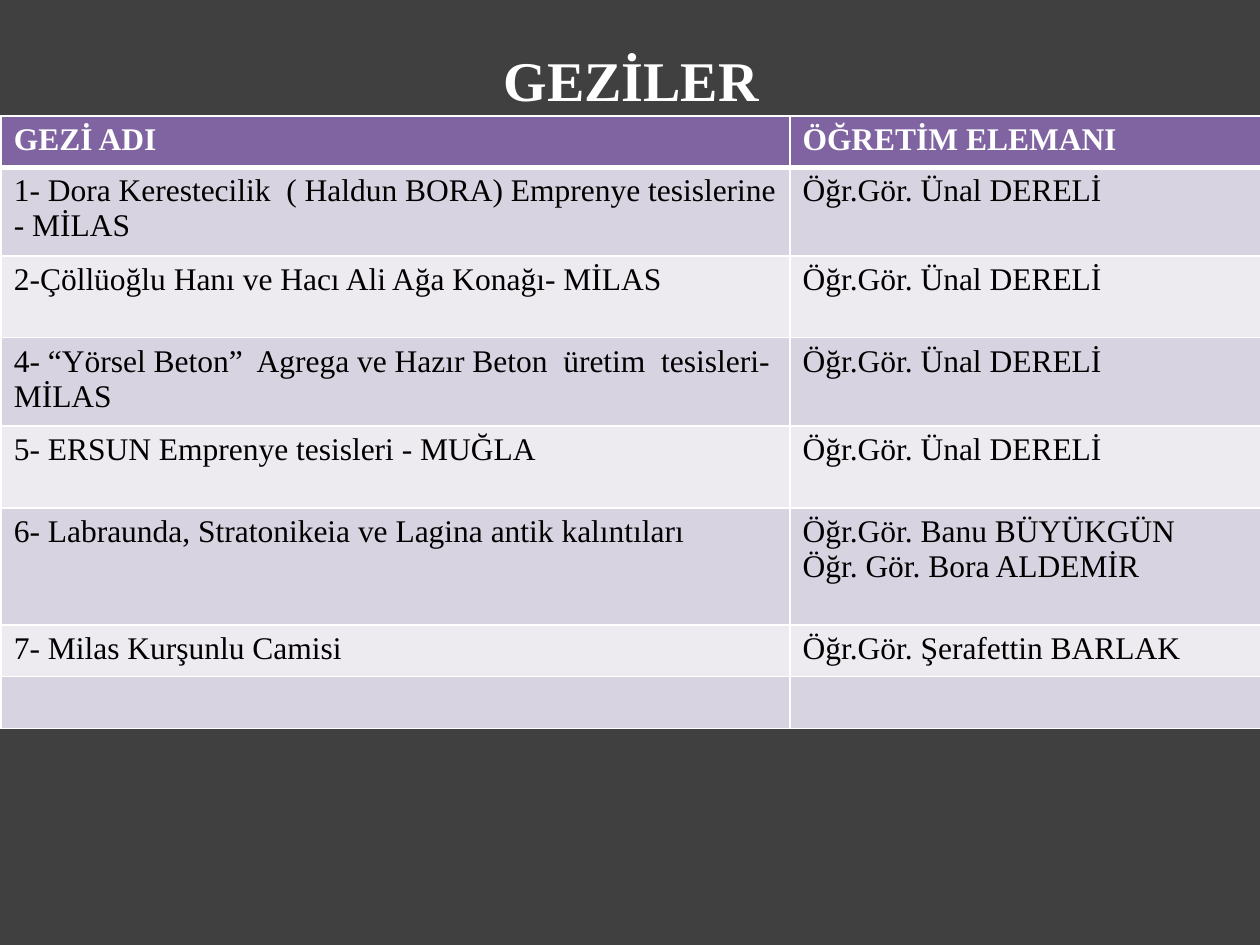
from lxml.etree import SubElement
from pptx import Presentation
from pptx.dml.color import RGBColor
from pptx.enum.text import MSO_ANCHOR, PP_ALIGN
from pptx.oxml.ns import qn
from pptx.util import Inches, Pt

WHITE = RGBColor(0xFF, 0xFF, 0xFF)
BLACK = RGBColor(0, 0, 0)
BACKGROUND = RGBColor(0x40, 0x40, 0x40)
PURPLE = RGBColor(0x80, 0x64, 0xA2)
BANDS = [RGBColor(0xD8, 0xD3, 0xE0), RGBColor(0xED, 0xEA, 0xF0)]

TITLE = "GEZİLER"
LECTURER = "Öğr.Gör. Ünal DERELİ"
TRIPS = [
    (0.41, "GEZİ ADI", "ÖĞRETİM ELEMANI"),
    (0.65, "1- Dora Kerestecilik  ( Haldun BORA) Emprenye tesislerine - MİLAS", LECTURER),
    (0.65, "2-Çöllüoğlu Hanı ve Hacı Ali Ağa Konağı- MİLAS", LECTURER),
    (0.65, "4- “Yörsel Beton”  Agrega ve Hazır Beton  üretim  tesisleri- MİLAS", LECTURER),
    (0.65, "5- ERSUN Emprenye tesisleri - MUĞLA", LECTURER),
    (0.93, "6- Labraunda, Stratonikeia ve Lagina antik kalıntıları",
     "Öğr.Gör. Banu BÜYÜKGÜN\nÖğr. Gör. Bora ALDEMİR"),
    (0.41, "7- Milas Kurşunlu Camisi", "Öğr.Gör. Şerafettin BARLAK"),
    (0.41, "", ""),
]
COLUMN_WIDTHS = [6.26, 3.77]

FONT = "Times New Roman"
TITLE_FORMAT = {"name": FONT, "size": Pt(32), "bold": True}
HEADER_FORMAT = {"name": FONT, "size": Pt(18), "bold": True}
BODY_FORMAT = {"name": FONT, "size": Pt(18), "bold": False}


def write(frame, text, font_format, color):
    frame.text = text
    for paragraph in frame.paragraphs:
        for key, value in font_format.items():
            setattr(paragraph.font, key, value)
        paragraph.font.color.rgb = color
        for run in paragraph.runs:
            for key, value in font_format.items():
                setattr(run.font, key, value)
            run.font.color.rgb = color


def add_borders(cell, widths):
    properties = cell._tc.get_or_add_tcPr()
    for position, (side, width) in enumerate(widths.items()):
        line = SubElement(properties, qn(f"a:ln{side}"), w=str(Pt(width)))
        fill = SubElement(line, qn("a:solidFill"))
        SubElement(fill, qn("a:srgbClr"), val=str(WHITE))
        properties.insert(position, line)


presentation = Presentation()
presentation.slide_width = Inches(10)
presentation.slide_height = Inches(7.5)
slide = presentation.slides.add_slide(presentation.slide_layouts[6])
slide.background.fill.solid()
slide.background.fill.fore_color.rgb = BACKGROUND

title = slide.shapes.add_textbox(Inches(0.51), Inches(0), Inches(9), Inches(1.25)).text_frame
title.word_wrap = True
title.vertical_anchor = MSO_ANCHOR.MIDDLE
write(title, TITLE, TITLE_FORMAT, WHITE)
title.paragraphs[0].alignment = PP_ALIGN.CENTER

trips = slide.shapes.add_table(
    len(TRIPS), len(COLUMN_WIDTHS), Inches(0.01), Inches(0.92),
    Inches(sum(COLUMN_WIDTHS)), Inches(sum(height for height, *_ in TRIPS)),
).table
for column, width in zip(trips.columns, COLUMN_WIDTHS):
    column.width = Inches(width)

for index, (height, *texts) in enumerate(TRIPS):
    is_header = index == 0
    trips.rows[index].height = Inches(height)
    for column, text in enumerate(texts):
        cell = trips.cell(index, column)
        cell.fill.solid()
        cell.fill.fore_color.rgb = PURPLE if is_header else BANDS[(index - 1) % 2]
        write(cell.text_frame, text, HEADER_FORMAT if is_header else BODY_FORMAT,
              WHITE if is_header else BLACK)
        add_borders(cell, {"L": 1, "R": 1, "T": 3 if index == 1 else 1, "B": 3 if is_header else 1})

presentation.save("out.pptx")
